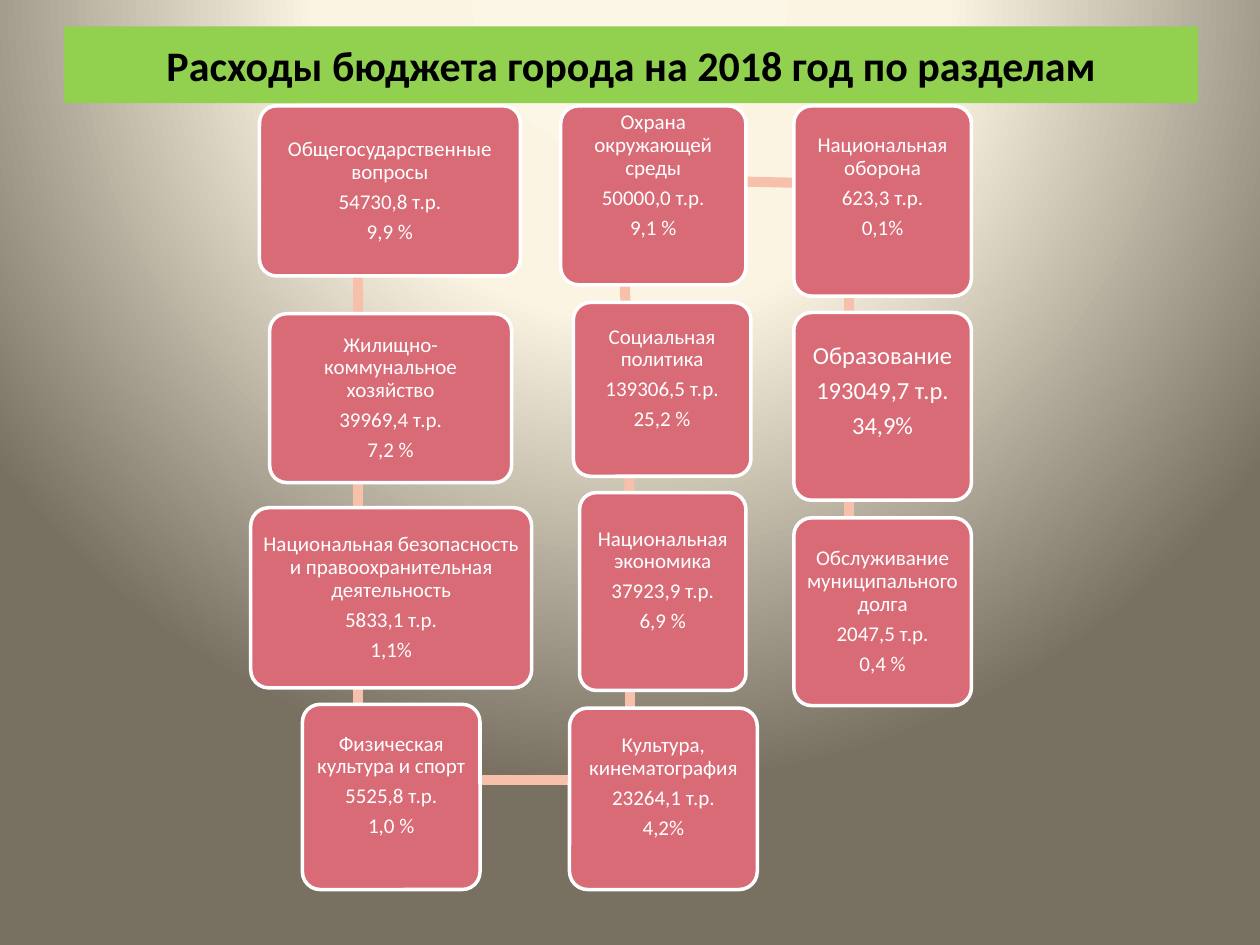
from dataclasses import dataclass
from itertools import pairwise

from pptx import Presentation
from pptx.dml.color import RGBColor
from pptx.enum.shapes import MSO_CONNECTOR, MSO_SHAPE
from pptx.enum.text import MSO_ANCHOR, MSO_AUTO_SIZE, PP_ALIGN
from pptx.oxml import parse_xml
from pptx.oxml.ns import nsdecls
from pptx.oxml.xmlchemy import OxmlElement
from pptx.slide import Slide
from pptx.util import Inches, Pt

STRAIGHT = MSO_CONNECTOR.STRAIGHT
RECTANGLE, ROUNDED = MSO_SHAPE.RECTANGLE, MSO_SHAPE.ROUNDED_RECTANGLE
MIDDLE, CENTER = MSO_ANCHOR.MIDDLE, PP_ALIGN.CENTER
NO_AUTOFIT = MSO_AUTO_SIZE.NONE
TITLE_ONLY = 5
FONT = "Calibri"
COLORS = {
    "title_fill": "92D050",
    "title_text": "000000",
    "card": "D96B77",
    "card_line": "FFFFFF",
    "card_text": "FFFFFF",
    "link": "F6C0AB",
}
BACKGROUND_STOPS = [(0, "FCF6E6"), (40, "FBF4E2"), (100, "787161")]


@dataclass(frozen=True)
class Section:
    """A budget section: its card, and the joint where the chain passes behind it."""
    name: str
    amount: str
    share: str
    place: tuple[float, float, float, float]
    joint: tuple[float, float]
    bottom_inset: float = 0
    size: int = 12


SECTIONS = [
    Section("Общегосударственные вопросы", "54730,8 т.р.", "9,9 %",
            (2.06, 0.84, 2.07, 1.35), (2.84, 1.38)),
    Section("Жилищно-коммунальное хозяйство", "39969,4 т.р.", "7,2 %",
            (2.14, 2.49, 1.92, 1.34), (2.84, 3.03)),
    Section("Национальная безопасность и правоохранительная деятельность",
            "5833,1 т.р.", "1,1%", (1.99, 4.03, 2.23, 1.43), (2.84, 4.61)),
    Section("Физическая культура и спорт", "5525,8 т.р.", "1,0 %",
            (2.4, 5.59, 1.41, 1.47), (2.84, 6.19), 0.18),
    Section("Культура, кинематография", "23264,1 т.р.", "4,2%",
            (4.52, 5.62, 1.49, 1.44), (5, 6.19), 0.18),
    Section("Национальная экономика", "37923,9 т.р.", "6,9 %",
            (4.6, 3.91, 1.32, 1.57), (5, 4.56), 0.17),
    Section("Социальная политика", "139306,5 т.р.", "25,2 %",
            (4.55, 2.4, 1.41, 1.38), (4.99, 2.95), 0.17),
    Section("Охрана окружающей среды", "50000,0 т.р.", "9,1 %",
            (4.45, 0.84, 1.47, 1.42), (4.92, 1.42), 0.31),
    Section("Национальная оборона", "623,3 т.р.", "0,1%",
            (6.3, 0.84, 1.41, 1.51), (6.74, 1.46), 0.22),
    Section("Образование", "193049,7 т.р.", "34,9%",
            (6.3, 2.48, 1.41, 1.49), (6.74, 3.09), 0.23, 14),
    Section("Обслуживание муниципального долга", "2047,5 т.р.", "0,4 %",
            (6.3, 4.11, 1.41, 1.49), (6.74, 4.72)),
]


def color(name: str) -> RGBColor:
    return RGBColor.from_string(COLORS[name])


def add_run(para, text: str, size: int, color_name: str, bold: bool = False) -> None:
    run = para.add_run()
    run.text = text
    run.font.name = FONT
    run.font.size = Pt(size)
    run.font.bold = bold
    run.font.color.rgb = color(color_name)


def paint_background(slide: Slide) -> None:
    """Fill the background with a circular gradient centred above the slide."""
    stops = "".join(
        f'<a:gs pos="{percent * 1000}"><a:srgbClr val="{value}"/></a:gs>'
        for percent, value in BACKGROUND_STOPS
    )
    background = parse_xml(
        f'<p:bg {nsdecls("p", "a")}><p:bgPr><a:gradFill rotWithShape="1">'
        f'<a:gsLst>{stops}</a:gsLst><a:path path="circle">'
        '<a:fillToRect l="50000" t="-80000" r="50000" b="180000"/></a:path>'
        '</a:gradFill><a:effectLst/></p:bgPr></p:bg>'
    )
    slide.element.cSld.insert(0, background)


def add_title(slide: Slide, text: str) -> None:
    title = slide.shapes.title
    title.left, title.top = Inches(0.51), Inches(0.21)
    title.width, title.height = Inches(9), Inches(0.61)
    title.fill.solid()
    title.fill.fore_color.rgb = color("title_fill")
    frame = title.text_frame
    frame.auto_size = NO_AUTOFIT
    frame.vertical_anchor = MIDDLE
    para = frame.paragraphs[0]
    para.alignment = CENTER
    add_run(para, text, 24, "title_text", bold=True)


def add_link(slide: Slide, start: Section, end: Section) -> None:
    points = [Inches(value) for value in (*start.joint, *end.joint)]
    link = slide.shapes.add_connector(STRAIGHT, *points)
    link.line.width = Inches(0.08)
    link.line.color.rgb = color("link")
    link.element.spPr.append(OxmlElement("a:effectLst"))


def add_card(slide: Slide, section: Section) -> None:
    card = slide.shapes.add_shape(ROUNDED, *map(Inches, section.place))
    card.adjustments[0] = 0.1
    card.shadow.inherit = False
    card.fill.solid()
    card.fill.fore_color.rgb = color("card")
    card.line.color.rgb = color("card_line")
    card.line.width = Pt(2)
    frame = card.text_frame
    frame.word_wrap = True
    frame.vertical_anchor = MIDDLE
    frame.margin_left = frame.margin_right = Inches(0.04)
    frame.margin_top = 0
    frame.margin_bottom = Inches(section.bottom_inset)
    for index, text in enumerate((section.name, section.amount, section.share)):
        para = frame.add_paragraph() if index else frame.paragraphs[0]
        para.alignment = CENTER
        para.line_spacing = 0.9
        para.space_after = Pt(0.35 * section.size)
        add_run(para, text, section.size, "card_text")


def main() -> None:
    deck = Presentation()
    deck.slide_width, deck.slide_height = Inches(10), Inches(7.5)
    slide = deck.slides.add_slide(deck.slide_layouts[TITLE_ONLY])
    paint_background(slide)
    add_title(slide, "Расходы бюджета города на 2018 год по разделам")
    for start, end in pairwise(SECTIONS):
        add_link(slide, start, end)
    for section in SECTIONS:
        add_card(slide, section)
    deck.save("out.pptx")


if __name__ == "__main__":
    main()
